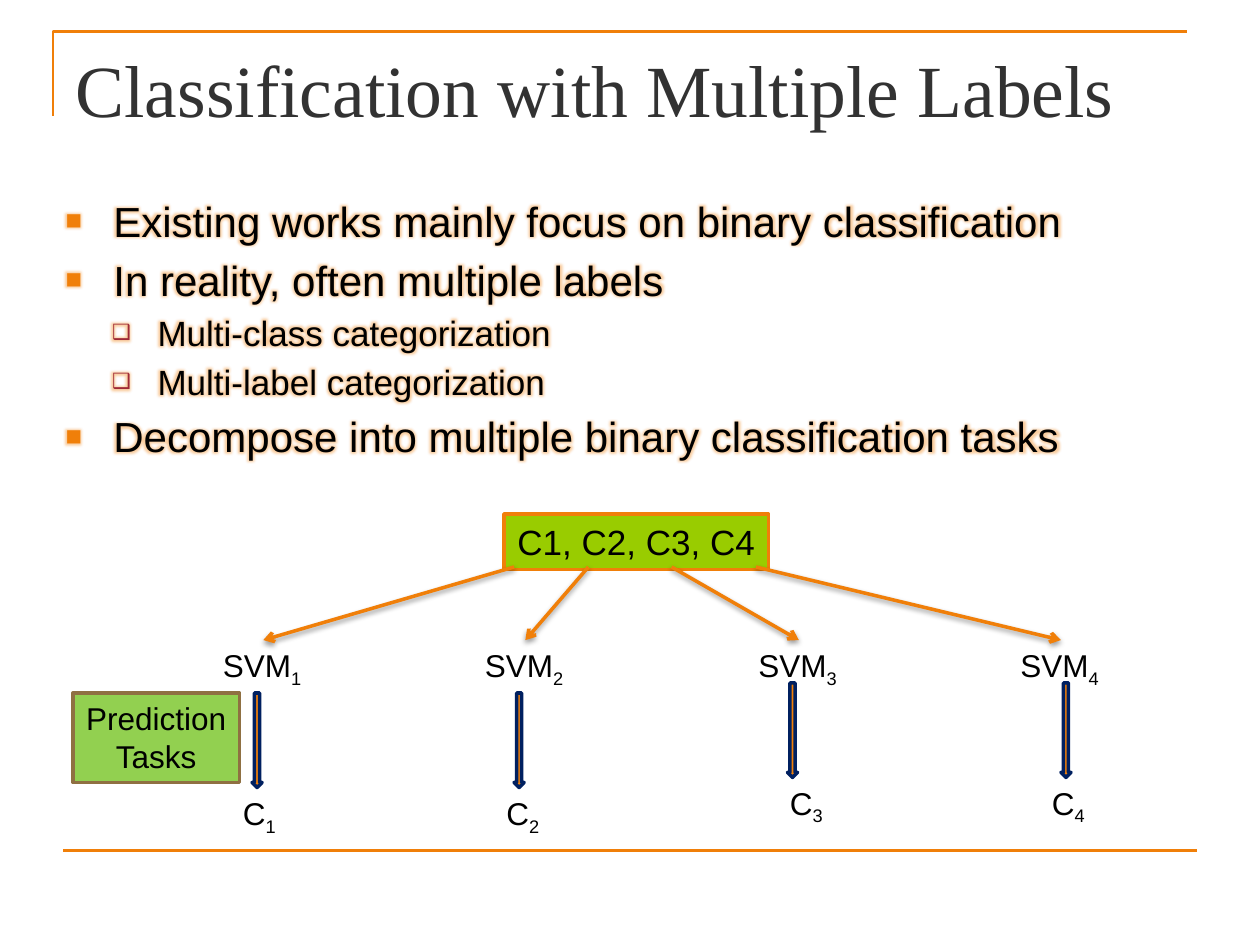
"""Build a slide on splitting multi-label classification into binary tasks."""
from dataclasses import dataclass

from lxml import etree
from pptx import Presentation
from pptx.dml.color import RGBColor
from pptx.enum.shapes import MSO_CONNECTOR, MSO_SHAPE
from pptx.enum.text import MSO_ANCHOR, MSO_AUTO_SIZE, PP_ALIGN
from pptx.oxml import parse_xml
from pptx.oxml.ns import nsdecls, qn
from pptx.util import Inches, Pt

RECT, DOWN = MSO_SHAPE.RECTANGLE, MSO_SHAPE.DOWN_ARROW
STRAIGHT = MSO_CONNECTOR.STRAIGHT
TOP, NO_FIT = MSO_ANCHOR.TOP, MSO_AUTO_SIZE.NONE
LEFT, CENTER = PP_ALIGN.LEFT, PP_ALIGN.CENTER


@dataclass(frozen=True)
class Theme:
    orange: str = "F07F09"
    red: str = "9F2936"
    ink: str = "000000"
    gray: str = "323232"
    lime: str = "99CC00"
    green: str = "92D050"
    brown: str = "8F7042"
    navy: str = "002060"
    serif: str = "Times New Roman"
    sans: str = "Arial"
    head: int = 42
    big: int = 24
    mid: int = 20
    small: int = 18
    rule: float = 1.5
    edge: float = 2


theme = Theme()


def write(para, text, size, color=theme.ink, face=theme.sans):
    run = para.add_run()
    run.text = text
    run.font.size = Pt(size)
    run.font.name = face
    run.font.color.rgb = RGBColor.from_string(color)
    return run


def paint(shape, line, width, fill=None):
    shape.line.color.rgb = RGBColor.from_string(line)
    shape.line.width = Pt(width)
    if fill:
        shape.fill.solid()
        shape.fill.fore_color.rgb = RGBColor.from_string(fill)
        shape.shadow.inherit = False


deck = Presentation()
deck.slide_width, deck.slide_height = Inches(10), Inches(7.5)
slide = deck.slides.add_slide(deck.slide_layouts[1])
shapes = slide.shapes

title, body = shapes.title, slide.placeholders[1]
for holder, left, top, height in ((title, 0.5, 0.3, 1.25), (body, 0.42, 1.5, 2.33)):
    holder.left, holder.top = Inches(left), Inches(top)
    holder.width, holder.height = Inches(9), Inches(height)
    holder.text_frame.auto_size = NO_FIT
    holder.text_frame.vertical_anchor = TOP

para = title.text_frame.paragraphs[0]
para.alignment = LEFT
write(para, "Classification with Multiple Labels", theme.head, theme.gray, theme.serif)

styles = (
    (theme.big, 0.38, -0.38, theme.orange, 65, "■"),
    (theme.mid, 0.73, -0.36, theme.red, 60, "❑"),
)
points = (
    (0, "Existing works mainly focus on binary classification"),
    (0, "In reality, often multiple labels"),
    (1, "Multi-class categorization"),
    (1, "Multi-label categorization"),
    (0, "Decompose into multiple binary classification tasks"),
)
for i, (level, text) in enumerate(points):
    frame = body.text_frame
    para = frame.add_paragraph() if i else frame.paragraphs[0]
    para.level = level
    size, margin, indent, color, scale, mark = styles[level]
    props = para._p.get_or_add_pPr()
    props.set("marL", str(Inches(margin)))
    props.set("indent", str(Inches(indent)))
    tint = etree.SubElement(props, qn("a:buClr"))
    etree.SubElement(tint, qn("a:srgbClr"), val=color)
    etree.SubElement(props, qn("a:buSzPct"), val=str(scale * 1000))
    etree.SubElement(props, qn("a:buFont"), typeface=theme.sans)
    etree.SubElement(props, qn("a:buChar"), char=mark)
    run = write(para, text, size)
    glow = parse_xml(
        f'<a:effectLst {nsdecls("a")}><a:glow rad="{Pt(5)}">'
        f'<a:srgbClr val="{theme.orange}"><a:alpha val="40000"/></a:srgbClr>'
        "</a:glow></a:effectLst>"
    )
    run.font._element.insert(1, glow)

pen = shapes.build_freeform(Inches(0.42), Inches(0.92))
pen.add_line_segments(
    [(Inches(0.42), Inches(0.25)), (Inches(9.42), Inches(0.25))], close=False
)
frame = pen.convert_to_shape()
frame.fill.background()
frame.shadow.inherit = False
paint(frame, theme.orange, theme.rule)

base = shapes.add_connector(STRAIGHT, Inches(0.5), Inches(6.75), Inches(9.5), Inches(6.75))
paint(base, theme.orange, theme.rule)
etree.SubElement(base._element.spPr, qn("a:effectLst"))

boxes = (
    (4, 4.08, 2.1, 0.44, theme.lime, theme.orange, theme.mid, ("C1, C2, C3, C4",)),
    (0.58, 5.5, 1.32, 0.71, theme.green, theme.brown, theme.small, ("Prediction", "Tasks")),
)
for left, top, width, height, fill, line, size, lines in boxes:
    box = shapes.add_shape(RECT, Inches(left), Inches(top), Inches(width), Inches(height))
    paint(box, line, theme.edge, fill)
    frame = box.text_frame
    frame.word_wrap = False
    frame.vertical_anchor = TOP
    for i, text in enumerate(lines):
        para = frame.add_paragraph() if i else frame.paragraphs[0]
        para.alignment = CENTER
        write(para, text, size)

tasks = (
    (4.08, 1.67, 2, 1.83, 5.5),
    (4.67, 3.75, 4.08, 3.92, 5.5),
    (5.33, 5.92, 6.25, 6.17, 5.42),
    (6, 8, 8.42, 8.25, 5.42),
)
for i, (start, model, shaft, label, top) in enumerate(tasks, 1):
    tags = []
    for text, left, y, width in (("SVM", model, 5.08, 0.84), ("C", label, top + 0.75, 0.48)):
        tag = shapes.add_textbox(Inches(left), Inches(y), Inches(width), Inches(0.4))
        tag.text_frame.word_wrap = False
        para = tag.text_frame.paragraphs[0]
        write(para, text, theme.small)
        sub = write(para, str(i), theme.small)
        sub.font._element.set("baseline", "-25000")
        tags.append(tag)

    arrow = shapes.add_shape(DOWN, Inches(shaft), Inches(top), Inches(0.08), Inches(0.75))
    paint(arrow, theme.navy, theme.edge, theme.orange)

    link = shapes.add_connector(
        STRAIGHT, Inches(start), Inches(4.5), Inches(model + 0.42), Inches(5.08)
    )
    link.end_connect(tags[0], 0)
    paint(link, theme.orange, theme.edge)
    etree.SubElement(link.line._get_or_add_ln(), qn("a:tailEnd"), type="arrow")
    link._element.spPr.append(parse_xml(
        f'<a:effectLst {nsdecls("a")}>'
        f'<a:outerShdw blurRad="{Pt(3.1)}" dist="{Pt(1.6)}" dir="5400000" rotWithShape="0">'
        f'<a:srgbClr val="{theme.ink}"><a:alpha val="38000"/></a:srgbClr>'
        "</a:outerShdw></a:effectLst>"
    ))

deck.save("out.pptx")
